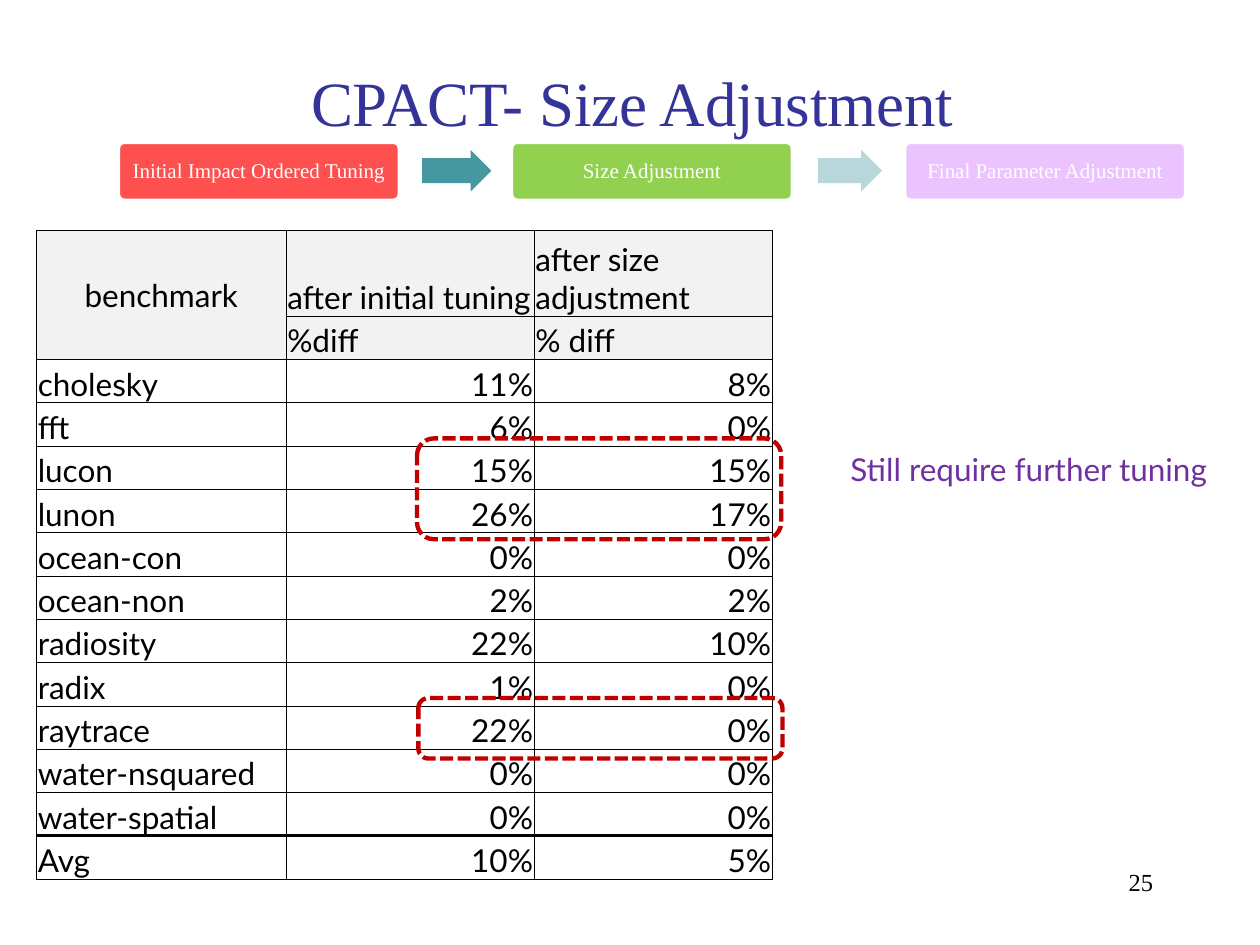
from lxml.etree import SubElement
from pptx import Presentation
from pptx.dml.color import RGBColor
from pptx.enum.dml import MSO_LINE
from pptx.enum.shapes import MSO_SHAPE as Shape
from pptx.enum.text import MSO_ANCHOR as Anchor, PP_ALIGN as Align
from pptx.oxml import parse_xml
from pptx.oxml.ns import nsdecls, qn
from pptx.util import Inches, Pt

SERIF, SANS = "Times New Roman", "Lato"
WHITE = RGBColor(0xFF, 0xFF, 0xFF)
BLACK = RGBColor(0, 0, 0)
NAVY = RGBColor(0x33, 0x33, 0x99)
RED = RGBColor(0xFF, 0x50, 0x50)
GREEN = RGBColor(0x92, 0xD0, 0x50)
VIOLET = RGBColor(0xCC, 0x66, 0xFF)
TEAL = RGBColor(0x45, 0x97, 0xA0)
HEADER_GREY = RGBColor(0xF2, 0xF2, 0xF2)
DARK_RED = RGBColor(0xC0, 0, 0)
PURPLE = RGBColor(0x70, 0x30, 0xA0)

STEPS = [("Initial Impact Ordered Tuning", RED),
         ("Size Adjustment", GREEN),
         ("Final Parameter Adjustment", VIOLET)]
HEADER = [("benchmark", "after initial tuning", "after size adjustment"),
          ("", "%diff", "% diff")]
RESULTS = [("cholesky", 11, 8), ("fft", 6, 0), ("lucon", 15, 15),
           ("lunon", 26, 17), ("ocean-con", 0, 0), ("ocean-non", 2, 2),
           ("radiosity", 22, 10), ("radix", 1, 0), ("raytrace", 22, 0),
           ("water-nsquared", 0, 0), ("water-spatial", 0, 0), ("Avg", 10, 5)]


def write(frame, text, font, size, color, align=Align.LEFT):
    frame.text = text
    para = frame.paragraphs[0]
    para.alignment = align
    for span in para.runs:
        span.font.name = font
        span.font.size = Pt(size)
        span.font.color.rgb = color


def set_margins(holder, side, bottom):
    holder.margin_left = holder.margin_right = holder.margin_top = Inches(side)
    holder.margin_bottom = Inches(bottom)


def add_box(page, kind, left, top, width, height, fill=None):
    box = page.shapes.add_shape(kind, Inches(left), Inches(top),
                                Inches(width), Inches(height))
    box.shadow.inherit = False
    box.line.fill.background()
    if fill is None:
        box.fill.background()
    else:
        box.fill.solid()
        box.fill.fore_color.rgb = fill
    return box


def add_title(page, left, top, width, height):
    title = page.shapes.title
    title.left, title.top = Inches(left), Inches(top)
    title.width, title.height = Inches(width), Inches(height)
    title.text_frame.vertical_anchor = Anchor.MIDDLE
    write(title.text_frame, "CPACT- Size Adjustment", SERIF, 36, NAVY, Align.CENTER)


def add_note(page, text, font, size, color, align, left, top, width, height):
    note = page.shapes.add_textbox(Inches(left), Inches(top),
                                   Inches(width), Inches(height))
    note.text_frame.word_wrap = True
    write(note.text_frame, text, font, size, color, align)


def add_process(page, left, top, height):
    """Draw the tuning steps in a row, joined by block arrows."""
    width, pitch = 2.23, 3.12
    for index, (label, color) in enumerate(STEPS):
        step_left = left + index * pitch
        step = add_box(page, Shape.ROUNDED_RECTANGLE, step_left, top, width, height, color)
        step.adjustments[0] = 0.1
        step.line.color.rgb = WHITE
        step.line.width = Pt(2)
        frame = step.text_frame
        frame.word_wrap = True
        frame.vertical_anchor = Anchor.MIDDLE
        set_margins(frame, 0.05, 0.05)
        write(frame, label, SERIF, 12, WHITE, Align.CENTER)
        frame.paragraphs[0].line_spacing = 0.9
    for offset, arrow_width in ((2.41, 0.55), (5.55, 0.51)):
        arrow = add_box(page, Shape.RIGHT_ARROW, left + offset, top + 0.06,
                        arrow_width, 0.33, TEAL)
        arrow.adjustments[0] = 0.6
        arrow.adjustments[1] = 0.5


def set_borders(cell, top=0.5, bottom=0.5):
    properties = cell._tc.get_or_add_tcPr()
    for index, (side, width) in enumerate(
            (("L", 0.5), ("R", 0.5), ("T", top), ("B", bottom))):
        properties.insert(index, parse_xml(
            f'<a:ln{side} {nsdecls("a")} w="{Pt(width)}"><a:solidFill>'
            f'<a:srgbClr val="{BLACK}"/></a:solidFill></a:ln{side}>'))


def add_results_table(page, left, top, width, height):
    rows = HEADER + [(name, f"{first}%", f"{second}%")
                     for name, first, second in RESULTS]
    table = page.shapes.add_table(len(rows), 3, Inches(left), Inches(top),
                                  Inches(width), Inches(height)).table
    table.first_row = table.horz_banding = False
    for column, column_width in zip(table.columns, (1.98, 1.97, 1.89)):
        column.width = Inches(column_width)
    header_height = 0.68
    for index, row in enumerate(table.rows):
        row.height = Inches((height - header_height) / (len(rows) - 1)
                            if index else header_height)
    last = len(rows) - 1
    for r, values in enumerate(rows):
        is_header = r < len(HEADER)
        for c, value in enumerate(values):
            cell = table.cell(r, c)
            set_margins(cell, 0.01, 0)
            cell.vertical_anchor = Anchor.BOTTOM
            align = Align.RIGHT if c and not is_header else Align.LEFT
            write(cell.text_frame, value, SANS, 18, BLACK, align)
            if is_header:
                cell.fill.solid()
                cell.fill.fore_color.rgb = HEADER_GREY
            else:
                cell.fill.background()
            set_borders(cell, top=2 if r == last else 0.5,
                        bottom=2 if r == last - 1 else 0.5)
    corner = table.cell(0, 0)
    corner.merge(table.cell(1, 0))
    corner.vertical_anchor = Anchor.MIDDLE
    corner.text_frame.paragraphs[0].alignment = Align.CENTER


def add_highlight(page, left, top, width, height):
    frame = add_box(page, Shape.ROUNDED_RECTANGLE, left, top, width, height)
    frame.line.color.rgb = DARK_RED
    frame.line.width = Pt(2.5)
    frame.line.dash_style = MSO_LINE.SQUARE_DOT


def add_veil(page, left, top, width, height):
    """Fade the step that is still to come."""
    veil = add_box(page, Shape.RECTANGLE, left, top, width, height, WHITE)
    color = veil.fill._xPr.find(qn("a:solidFill"))[0]
    SubElement(color, qn("a:alpha"), val="62000")


def main():
    deck = Presentation()
    deck.slide_width, deck.slide_height = Inches(10), Inches(7.5)
    page = deck.slides.add_slide(deck.slide_layouts[5])
    add_note(page, "25", SERIF, 14, BLACK, Align.RIGHT, 7.17, 6.83, 2.08, 0.5)
    add_title(page, 0.77, 0.49, 8.5, 0.62)
    add_process(page, 0.94, 1.13, 0.46)
    add_results_table(page, 0.29, 1.83, 5.83, 5.15)
    add_highlight(page, 3.32, 5.54, 2.89, 0.48)
    add_highlight(page, 3.31, 3.48, 2.89, 0.8)
    add_note(page, "Still require further tuning", SANS, 18, PURPLE,
             Align.CENTER, 6.6, 3.52, 3.13, 0.71)
    add_veil(page, 6.36, 1.02, 3.51, 0.64)
    deck.save("out.pptx")


if __name__ == "__main__":
    main()
